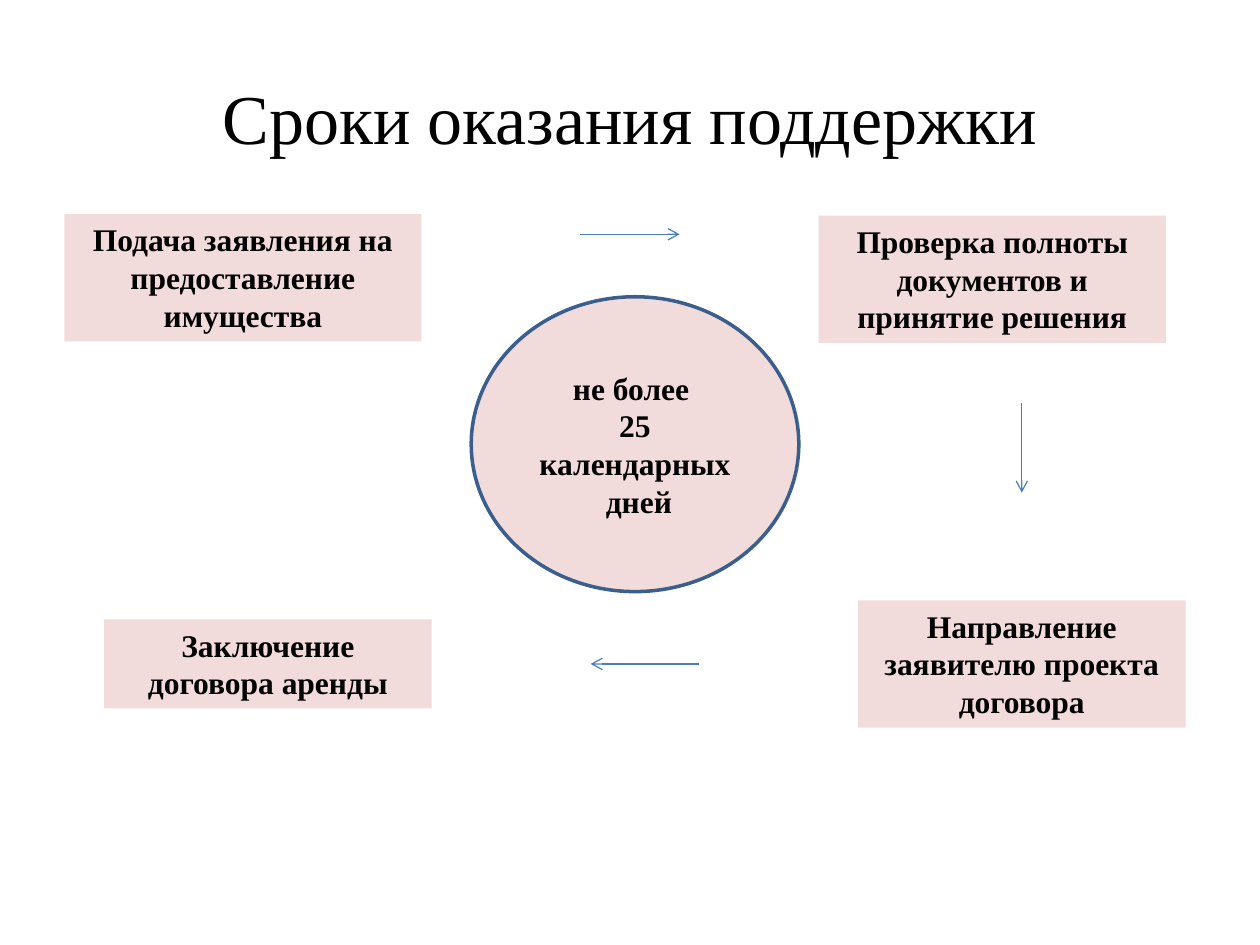
import pptx
import pptx.util
import pptx.dml.color
import pptx.enum.shapes
import pptx.enum.text
import pptx.oxml
import pptx.oxml.ns
from lxml import etree

Pt = pptx.util.Pt
RGBColor = pptx.dml.color.RGBColor
MSO_SHAPE = pptx.enum.shapes.MSO_SHAPE
MSO_ANCHOR = pptx.enum.text.MSO_ANCHOR

BLACK = RGBColor(0x00, 0x00, 0x00)
PINK = RGBColor(0xF2, 0xDC, 0xDB)
OUTLINE = RGBColor(0x3A, 0x5F, 0x8C)
ARROW = RGBColor(0x4B, 0x7E, 0xBC)


def write(tf, text, size=18, bold=True, color=BLACK, font="Times New Roman",
          anchor=MSO_ANCHOR.TOP):
    """Fill a text frame with centred text, one paragraph per line."""
    tf.word_wrap = True
    tf.vertical_anchor = anchor
    for i, line in enumerate(text.split("\n")):
        p = tf.add_paragraph() if i else tf.paragraphs[0]
        p.alignment = pptx.enum.text.PP_ALIGN.CENTER
        r = p.add_run()
        r.text = line
        r.font.name = font
        r.font.size = Pt(size)
        r.font.bold = bold
        r.font.color.rgb = color


class Deck:
    """Holds the style and the current slide."""

    def __init__(self, fill=PINK, outline=OUTLINE, arrow=ARROW):
        self.fill, self.outline, self.arrow_color = fill, outline, arrow
        self.prs = pptx.Presentation()
        self.prs.slide_width, self.prs.slide_height = Pt(720), Pt(540)
        self.s = self.prs.slides.add_slide(self.prs.slide_layouts[6])

    def title(self, text, x, y, w, h):
        sp = self.s.shapes.add_textbox(Pt(x), Pt(y), Pt(w), Pt(h))
        write(sp.text_frame, text, size=40, bold=False, anchor=MSO_ANCHOR.MIDDLE)

    def shape(self, kind, x, y, w, h):
        sp = self.s.shapes.add_shape(kind, Pt(x), Pt(y), Pt(w), Pt(h))
        sp.shadow.inherit = False
        sp.fill.solid()
        sp.fill.fore_color.rgb = self.fill
        return sp

    def step(self, text, x, y, w, h):
        sp = self.shape(MSO_SHAPE.RECTANGLE, x, y, w, h)
        sp.line.fill.background()
        write(sp.text_frame, text)
        sp.text_frame.auto_size = pptx.enum.text.MSO_AUTO_SIZE.SHAPE_TO_FIT_TEXT

    def circle(self, text, x, y, w, h):
        sp = self.shape(MSO_SHAPE.OVAL, x, y, w, h)
        sp.line.color.rgb = self.outline
        sp.line.width = Pt(2)
        write(sp.text_frame, text, anchor=MSO_ANCHOR.MIDDLE)

    def arrow(self, x1, y1, x2, y2):
        sp = self.s.shapes.add_connector(
            pptx.enum.shapes.MSO_CONNECTOR.STRAIGHT, Pt(x1), Pt(y1), Pt(x2), Pt(y2))
        sp.line.color.rgb = self.arrow_color
        sp.line.width = Pt(0.75)
        qn = pptx.oxml.ns.qn
        etree.SubElement(sp.line._get_or_add_ln(), qn("a:tailEnd"), type="arrow")
        etree.SubElement(sp._element.spPr, qn("a:effectLst"))


def main():
    deck = Deck()

    # Heading
    deck.title("Сроки оказания поддержки", 36, 21.6, 648, 90)

    # Steps of the procedure
    for text, x, y, w, h in [
        ("Подача заявления на предоставление имущества", 36.8, 122.4, 204, 72.7),
        ("Заключение договора аренды", 59.5, 354, 187.2, 50.9),
        ("Проверка полноты документов и принятие решения", 467.8, 123.2, 198.4, 72.7),
        ("Направление заявителю проекта договора", 490.3, 343.1, 187.2, 72.7),
    ]:
        deck.step(text, x, y, w, h)

    # Total time in the centre
    deck.circle("не более \n25 календарных\n дней", 269.3, 169.6, 187.2, 168.5)

    # Arrows between the steps
    for ends in [(331.5, 133.9, 388.4, 133.9),
                 (583.9, 230.4, 583.9, 281.5),
                 (399.4, 379.4, 337.5, 379.4)]:
        deck.arrow(*ends)

    deck.prs.save("out.pptx")


if __name__ == "__main__":
    main()
